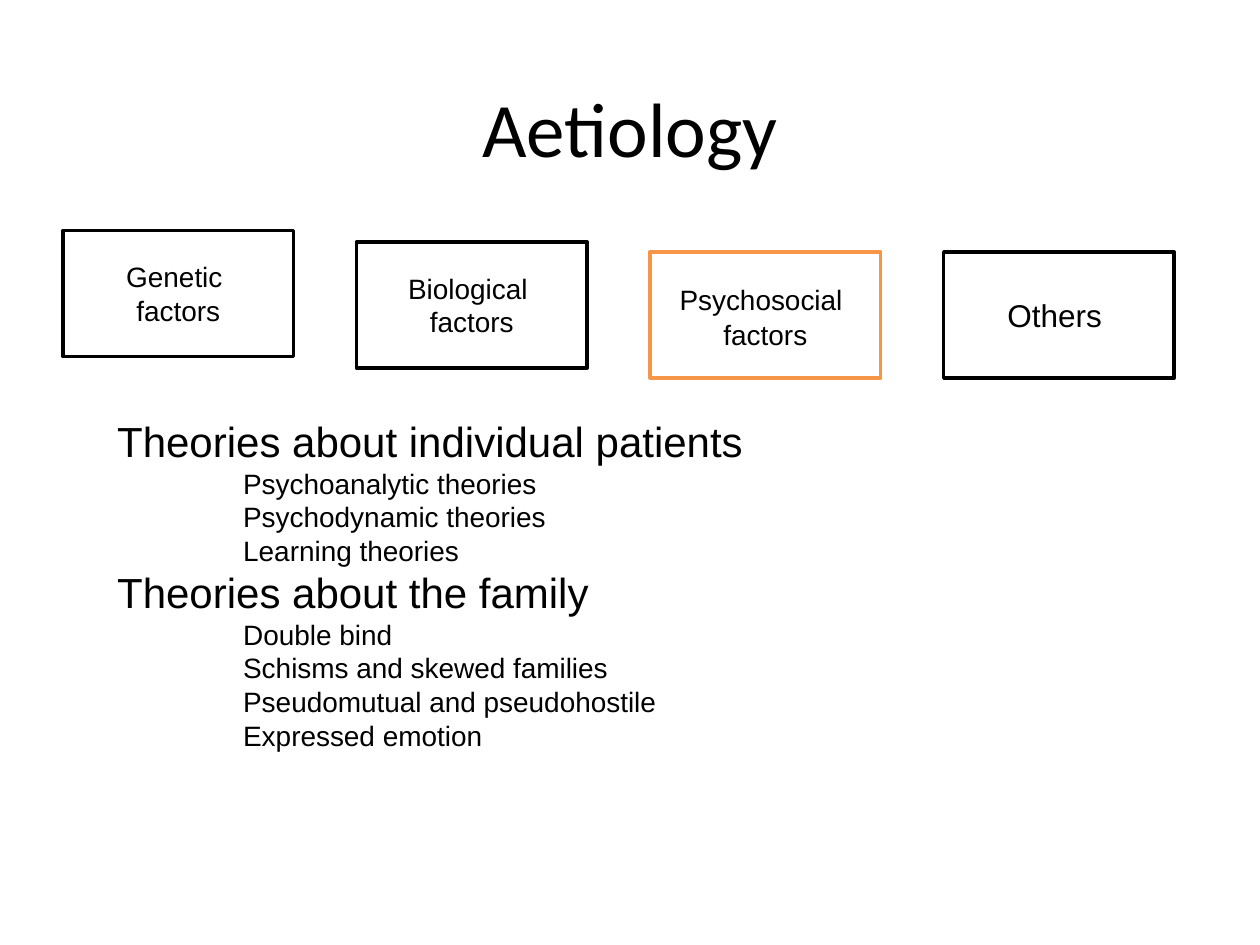
from dataclasses import dataclass

from lxml.etree import SubElement
from pptx import Presentation
from pptx.dml.color import RGBColor
from pptx.enum.shapes import MSO_SHAPE
from pptx.enum.text import MSO_ANCHOR, MSO_AUTO_SIZE, PP_ALIGN
from pptx.oxml.ns import qn
from pptx.util import Inches, Pt

BLACK = RGBColor(0x00, 0x00, 0x00)
WHITE = RGBColor(0xFF, 0xFF, 0xFF)
ORANGE = RGBColor(0xF7, 0x96, 0x46)

FACTOR_LEFT = 0.5
FACTOR_GAP = 0.5
FACTOR_WIDTH = 1.83
FACTOR_HEIGHT = 1


@dataclass(frozen=True)
class Span:
    text: str
    size: int = 16


@dataclass(frozen=True)
class Factor:
    top: float
    lines: tuple[tuple[Span, ...], ...]
    outline: RGBColor = BLACK


@dataclass(frozen=True)
class TheoryGroup:
    heading: str
    theories: tuple[str, ...]


FACTORS = (
    Factor(1.83, ((Span("Genetic "),), (Span("factors"),))),
    Factor(1.92, ((Span("Biological "),), (Span("factors"),))),
    Factor(2, ((Span("Psychosocial"), Span(" ", 18)), (Span("factors"),)), ORANGE),
    Factor(2, ((Span("Others ", 18),),)),
)

THEORY_GROUPS = (
    TheoryGroup(
        "Theories about individual patients",
        ("Psychoanalytic theories", "Psychodynamic theories", "Learning theories"),
    ),
    TheoryGroup(
        "Theories about the family",
        (
            "Double bind",
            "Schisms and skewed families",
            "Pseudomutual and pseudohostile",
            "Expressed emotion",
        ),
    ),
)


def place(shape, left: float, top: float, width: float, height: float) -> None:
    shape.left, shape.top = Inches(left), Inches(top)
    shape.width, shape.height = Inches(width), Inches(height)


def add_span(paragraph, span: Span, font_name: str = "Arial") -> None:
    run = paragraph.add_run()
    run.text = span.text
    run.font.name = font_name
    run.font.size = Pt(span.size)
    run.font.color.rgb = BLACK


def next_paragraph(frame, index: int):
    return frame.add_paragraph() if index else frame.paragraphs[0]


def write_title(title) -> None:
    place(title, 0.75, 0.38, 8.5, 1.25)
    title.text_frame.vertical_anchor = MSO_ANCHOR.MIDDLE
    heading = title.text_frame.paragraphs[0]
    heading.alignment = PP_ALIGN.CENTER
    add_span(heading, Span("Aetiology", 44), "Calibri")


def write_theories(body, groups: tuple[TheoryGroup, ...]) -> None:
    place(body, 0.83, 3.25, 8.88, 2.79)
    frame = body.text_frame
    frame.auto_size = MSO_AUTO_SIZE.SHAPE_TO_FIT_TEXT
    entries = []
    for group in groups:
        entries.append((0, Span(group.heading, 24)))
        entries.extend((2, Span(theory)) for theory in group.theories)
    for index, (level, span) in enumerate(entries):
        entry = next_paragraph(frame, index)
        properties = entry._p.get_or_add_pPr()
        properties.set("marL", str(Inches(1 if level else 0)))
        properties.set("indent", "0")
        SubElement(properties, qn("a:buNone"))
        entry.level = level
        entry.space_before = Pt(0)
        add_span(entry, span)


def draw_factor(slide, factor: Factor, left: float) -> None:
    box = slide.shapes.add_shape(
        MSO_SHAPE.RECTANGLE,
        Inches(left),
        Inches(factor.top),
        Inches(FACTOR_WIDTH),
        Inches(FACTOR_HEIGHT),
    )
    box.shadow.inherit = False
    box.fill.solid()
    box.fill.fore_color.rgb = WHITE
    box.line.color.rgb = factor.outline
    box.line.width = Pt(2)
    frame = box.text_frame
    frame.word_wrap = False
    frame.vertical_anchor = MSO_ANCHOR.MIDDLE
    for index, spans in enumerate(factor.lines):
        label = next_paragraph(frame, index)
        label.alignment = PP_ALIGN.CENTER
        for span in spans:
            add_span(label, span)


def main() -> None:
    presentation = Presentation()
    presentation.slide_width = Inches(10)
    presentation.slide_height = Inches(7.5)
    slide = presentation.slides.add_slide(presentation.slide_layouts[1])
    write_title(slide.shapes.title)
    write_theories(slide.placeholders[1], THEORY_GROUPS)
    for column, factor in enumerate(FACTORS):
        draw_factor(slide, factor, FACTOR_LEFT + column * (FACTOR_WIDTH + FACTOR_GAP))
    presentation.save("out.pptx")


if __name__ == "__main__":
    main()
